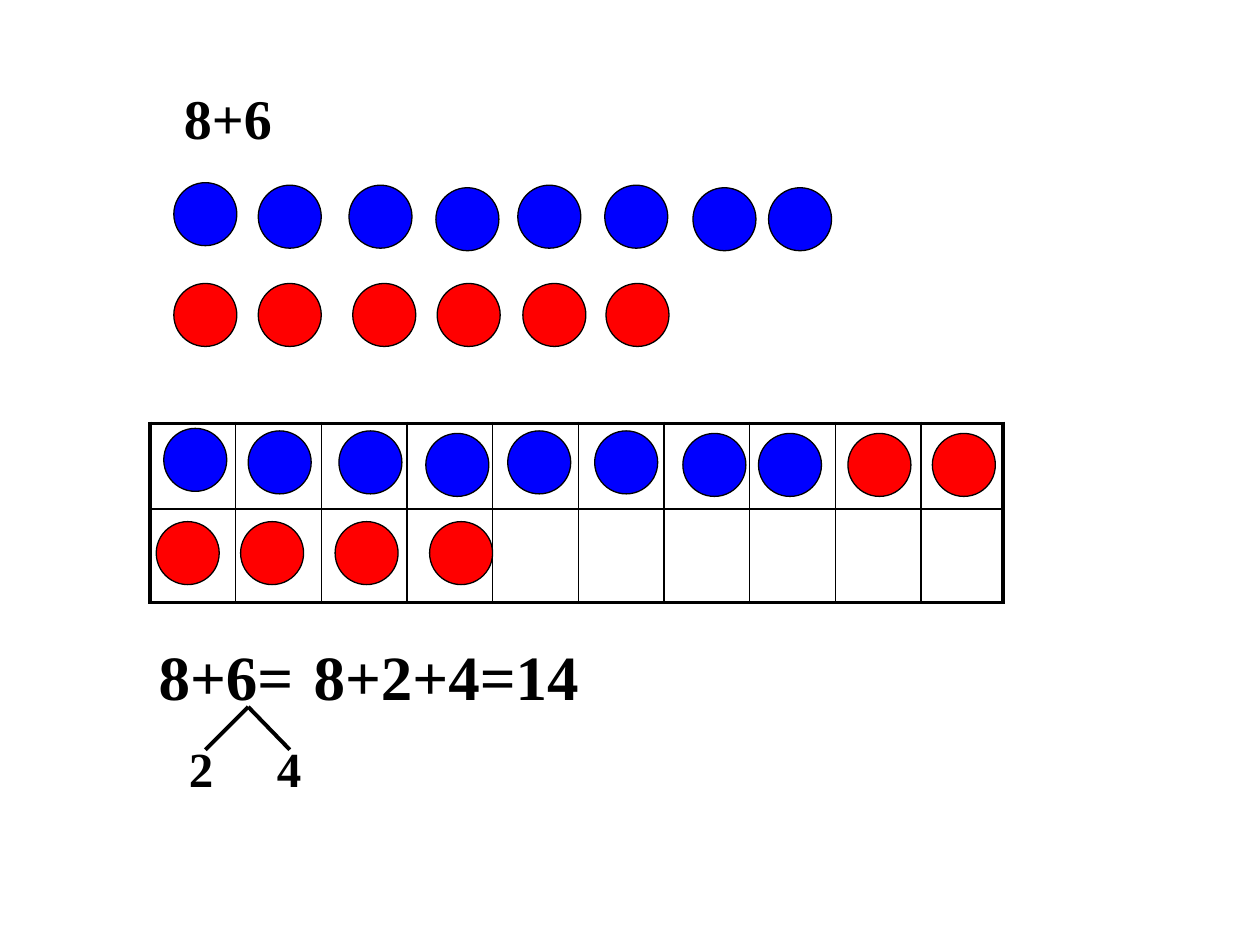
from lxml import etree
from pptx import Presentation
from pptx.dml.color import RGBColor
from pptx.enum.shapes import MSO_CONNECTOR, MSO_SHAPE
from pptx.enum.text import MSO_ANCHOR, MSO_AUTO_SIZE, PP_ALIGN
from pptx.oxml.ns import qn
from pptx.util import Inches, Pt

BLACK = RGBColor(0, 0, 0)
BLUE = RGBColor(0, 0, 255)
RED = RGBColor(255, 0, 0)
DIAMETER = Inches(0.5)


def add_counters(slide, positions, color):
    group = slide.shapes.add_group_shape()
    for x, y in positions:
        counter = group.shapes.add_shape(
            MSO_SHAPE.OVAL, Inches(x), Inches(y), DIAMETER, DIAMETER)
        counter.shadow.inherit = False
        counter.fill.solid()
        counter.fill.fore_color.rgb = color
        counter.line.color.rgb = BLACK
        counter.line.width = Pt(0.75)


def write_text(box, text, size):
    frame = box.text_frame
    frame.text = text
    frame.word_wrap = False
    frame.auto_size = MSO_AUTO_SIZE.SHAPE_TO_FIT_TEXT
    frame.vertical_anchor = MSO_ANCHOR.TOP
    paragraph = frame.paragraphs[0]
    paragraph.alignment = PP_ALIGN.LEFT
    paragraph.font.name = "Times New Roman"
    paragraph.font.size = Pt(size)
    paragraph.font.bold = True
    paragraph.font.color.rgb = BLACK


prs = Presentation()
prs.slide_width = Inches(10)
prs.slide_height = Inches(7.5)
slide = prs.slides.add_slide(prs.slide_layouts[5])

problem = slide.shapes.title
problem.left, problem.top = Inches(1.36), Inches(0.61)
problem.width, problem.height = Inches(0.91), Inches(0.64)
write_text(problem, "8+6", 32)

ROWS, COLUMNS = 2, 10
twenty_frame = slide.shapes.add_table(
    ROWS, COLUMNS, Inches(1.19), Inches(3.36), Inches(6.8), Inches(1.42)).table
twenty_frame.first_row = False
twenty_frame.horz_banding = False
for column in twenty_frame.columns:
    column.width = Inches(0.68)
twenty_frame.columns[COLUMNS - 1].width = Inches(0.65)
twenty_frame.rows[0].height = Inches(0.68)
twenty_frame.rows[1].height = Inches(0.74)
for r in range(ROWS):
    for c in range(COLUMNS):
        cell = twenty_frame.cell(r, c)
        properties = cell._tc.get_or_add_tcPr()
        outer_edges = {"lnL": c == 0, "lnR": c == COLUMNS - 1,
                       "lnT": r == 0, "lnB": r == ROWS - 1}
        for edge, is_outer in outer_edges.items():
            border = etree.SubElement(properties, qn(f"a:{edge}"),
                                      w=str(int(Pt(2.25 if is_outer else 1))))
            paint = etree.SubElement(border, qn("a:solidFill"))
            etree.SubElement(paint, qn("a:srgbClr"), val=str(BLACK))
        cell.fill.background()

eight = [(1.38, 1.45), (2.05, 1.47), (2.77, 1.47), (3.46, 1.49),
         (4.11, 1.47), (4.8, 1.47), (5.5, 1.49), (6.1, 1.49)]
add_counters(slide, eight, BLUE)
add_counters(slide, [(x, 2.25) for x in (1.38, 2.05, 2.8, 3.47, 4.15, 4.81)], RED)
add_counters(slide, [(x - 0.08, y + 1.95) for x, y in eight], BLUE)
add_counters(slide, [(x, 4.14) for x in (1.24, 1.91, 2.66, 3.41)], RED)
add_counters(slide, [(x, 3.44) for x in (6.73, 7.4)], RED)

for text, x, y, width, height, size in (
        ("8+6=", 1.16, 5.01, 1.28, 0.71, 36),
        ("2", 1.4, 5.81, 0.4, 0.57, 28),
        ("4", 2.1, 5.81, 0.4, 0.57, 28),
        ("8+2+4=14", 2.39, 5.01, 2.32, 0.71, 36)):
    box = slide.shapes.add_textbox(Inches(x), Inches(y), Inches(width), Inches(height))
    write_text(box, text, size)

for branch_end in (2.3, 1.63):
    branch = slide.shapes.add_connector(
        MSO_CONNECTOR.STRAIGHT, Inches(1.97), Inches(5.61),
        Inches(branch_end), Inches(5.95))
    branch.line.color.rgb = BLACK
    branch.line.width = Pt(2.25)
    etree.SubElement(branch._element.spPr, qn("a:effectLst"))

prs.save("out.pptx")
